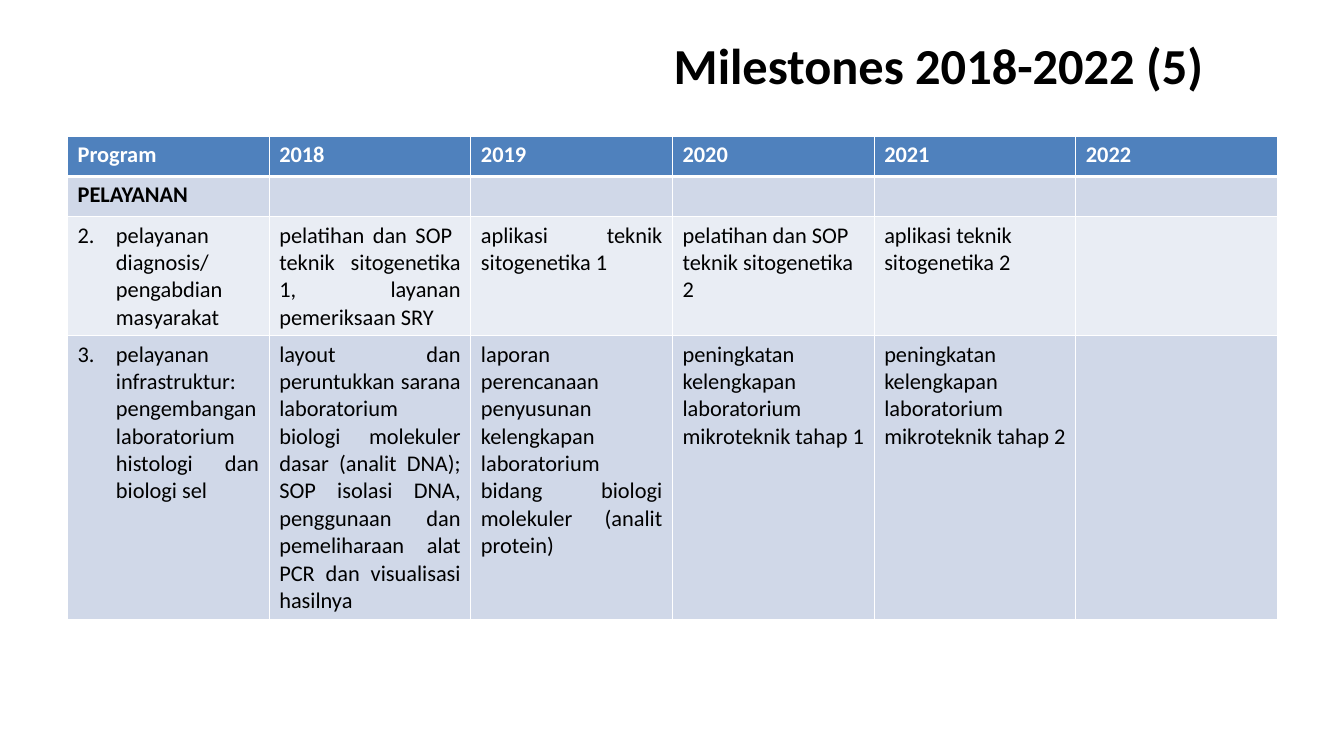
"""Build the Milestones 2018-2022 (5) slide with its programme table."""
import pptx
import pptx.dml.color
import pptx.enum.text
import pptx.oxml.ns
import pptx.util
from lxml import etree

Inches = pptx.util.Inches
Pt = pptx.util.Pt
ALIGN = pptx.enum.text.PP_ALIGN
ANCHOR = pptx.enum.text.MSO_ANCHOR
qn = pptx.oxml.ns.qn

COLORS = {"white": "FFFFFF", "black": "000000", "header": "4F81BD",
          "band_dark": "D0D8E8", "band_light": "E9EDF4"}


def write_text(text_frame, text, size=16, color=None, bold=False, align=ALIGN.LEFT, number=None):
    """Fill the first paragraph, numbered from the given value if any."""
    paragraph = text_frame.paragraphs[0]
    paragraph.alignment = align
    if number:
        properties = paragraph._p.get_or_add_pPr()
        properties.set("marL", str(Inches(0.38)))
        properties.set("indent", str(-Inches(0.38)))
        etree.SubElement(properties, qn("a:buFont"), typeface="+mj-lt")
        etree.SubElement(properties, qn("a:buAutoNum"), type="arabicPeriod", startAt=str(number))
    run = paragraph.add_run()
    run.text = text
    run.font.name = "Calibri"
    run.font.size = Pt(size)
    run.font.bold = bold
    if color:
        run.font.color.rgb = pptx.dml.color.RGBColor.from_string(COLORS[color])


def set_borders(cell, widths):
    """Draw white cell borders, with widths in points by side."""
    properties = cell._tc.get_or_add_tcPr()
    for position, (side, width) in enumerate(widths.items()):
        line = etree.Element(qn(f"a:ln{side}"), w=str(Pt(width)))
        fill = etree.SubElement(line, qn("a:solidFill"))
        etree.SubElement(fill, qn("a:srgbClr"), val=COLORS["white"])
        properties.insert(position, line)


presentation = pptx.Presentation()
presentation.slide_width = Inches(13.33)
presentation.slide_height = Inches(7.5)
slide = presentation.slides.add_slide(presentation.slide_layouts[6])

title = slide.shapes.add_textbox(Inches(5.95), Inches(0.3), Inches(6.72), Inches(0.68))
title.text_frame.word_wrap = True
title.text_frame.vertical_anchor = ANCHOR.MIDDLE
write_text(title.text_frame, "Milestones 2018-2022 (5)", size=36, color="black", bold=True,
           align=ALIGN.CENTER)

rows = [
    ["Program", "2018", "2019", "2020", "2021", "2022"],
    ["PELAYANAN", "", "", "", "", ""],
    ["pelayanan diagnosis/ pengabdian masyarakat",
     "pelatihan dan SOP  teknik sitogenetika 1,  layanan pemeriksaan SRY",
     "aplikasi teknik sitogenetika 1",
     "pelatihan dan SOP  teknik sitogenetika 2",
     "aplikasi teknik sitogenetika 2", ""],
    ["pelayanan infrastruktur: pengembangan laboratorium histologi dan biologi sel",
     "layout dan peruntukkan sarana laboratorium biologi molekuler dasar (analit DNA); "
     "SOP isolasi DNA, penggunaan dan pemeliharaan alat PCR dan visualisasi hasilnya",
     "laporan perencanaan penyusunan kelengkapan laboratorium bidang  biologi molekuler "
     "(analit protein)",
     "peningkatan kelengkapan laboratorium mikroteknik tahap 1",
     "peningkatan kelengkapan laboratorium mikroteknik tahap 2", ""],
]
row_heights = [0.4, 0.4, 1.18, 2.82]
row_fills = ["header", "band_dark", "band_light", "band_dark"]
row_numbers = [None, None, 2, 3]
justified_cells = {(2, 1), (2, 2), (3, 0), (3, 1), (3, 2)}

table_frame = slide.shapes.add_table(len(rows), len(rows[0]), Inches(0.67), Inches(1.35),
                                     Inches(12), Inches(sum(row_heights)))
table = table_frame.table
for column in table.columns:
    column.width = Inches(2)

for row_index, texts in enumerate(rows):
    table.rows[row_index].height = Inches(row_heights[row_index])
    for column_index, text in enumerate(texts):
        cell = table.cell(row_index, column_index)
        cell.fill.solid()
        cell.fill.fore_color.rgb = pptx.dml.color.RGBColor.from_string(COLORS[row_fills[row_index]])
        set_borders(cell, {"L": 1, "R": 1, "T": 3 if row_index == 1 else 1,
                           "B": 3 if row_index == 0 else 1})
        if text:
            justified = (row_index, column_index) in justified_cells
            write_text(cell.text_frame, text,
                       color=None if row_index == 0 else "black",
                       bold=row_index < 2,
                       align=ALIGN.JUSTIFY if justified else ALIGN.LEFT,
                       number=row_numbers[row_index] if column_index == 0 else None)

presentation.save("out.pptx")
